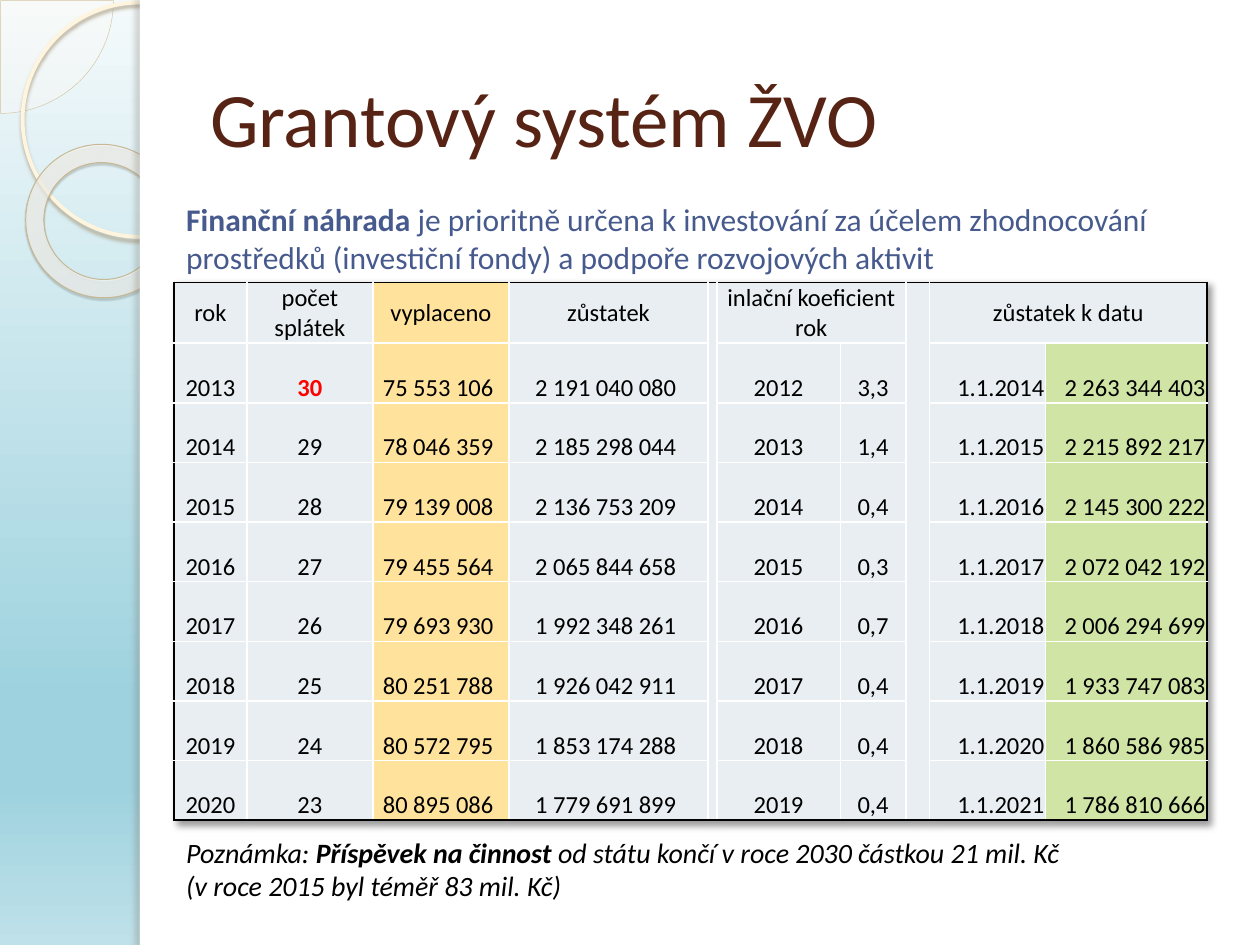
from lxml import etree
from pptx import Presentation
from pptx.dml.color import RGBColor
from pptx.enum.shapes import MSO_SHAPE
from pptx.enum.text import MSO_ANCHOR, MSO_AUTO_SIZE, PP_ALIGN
from pptx.oxml.ns import qn
from pptx.util import Inches, Pt

PIE, ELLIPSE, DONUT, RECT = (MSO_SHAPE.PIE, MSO_SHAPE.OVAL,
                             MSO_SHAPE.DONUT, MSO_SHAPE.RECTANGLE)
TOP, MIDDLE, BOTTOM = MSO_ANCHOR.TOP, MSO_ANCHOR.MIDDLE, MSO_ANCHOR.BOTTOM
CENTER, RIGHT = PP_ALIGN.CENTER, PP_ALIGN.RIGHT
FIT_SHAPE, FIXED = MSO_AUTO_SIZE.SHAPE_TO_FIT_TEXT, MSO_AUTO_SIZE.NONE

BLACK, WHITE, RED = "000000", "FFFFFF", "FF0000"
GREY, YELLOW, GREEN = "E8EEF1", "FFE39D", "D0E4A6"
BROWN, BLUE = "572314", "475A8D"

LEFT, WIDTH = 1.38, 8.2
COLUMNS = [0.58, 1, 1.08, 1.58, 0.07, 0.98, 0.52, 0.19, 0.92, 1.28]
TABLE_HEIGHT = 4.26
GAPS = (4, 7)
HEADINGS = ["rok", "počet splátek", "vyplaceno", "zůstatek", "",
            "inlační koeficient rok", "", "", "zůstatek k datu", ""]
FIRST_YEAR, FIRST_COUNT = 2013, 30
YEARLY = [  # paid out, balance, inflation rate, balance at date
    ("75 553 106 ", "2 191 040 080 ", "3,3", "2 263 344 403"),
    ("78 046 359 ", "2 185 298 044 ", "1,4", "2 215 892 217"),
    ("79 139 008 ", "2 136 753 209 ", "0,4", "2 145 300 222"),
    ("79 455 564 ", "2 065 844 658 ", "0,3", "2 072 042 192"),
    ("79 693 930 ", "1 992 348 261 ", "0,7", "2 006 294 699"),
    ("80 251 788 ", "1 926 042 911 ", "0,4", "1 933 747 083"),
    ("80 572 795 ", "1 853 174 288 ", "0,4", "1 860 586 985"),
    ("80 895 086 ", "1 779 691 899 ", "0,4", "1 786 810 666"),
]


def rgb(color):
    return RGBColor.from_string(color)


def child(parent, tag, **attributes):
    element = etree.SubElement(parent, qn(tag))
    for name, value in attributes.items():
        element.set(name, str(value))
    return element


def add_color(parent, color, alpha=100):
    node = child(parent, "a:srgbClr", val=color)
    if alpha < 100:
        child(node, "a:alpha", val=alpha * 1000)


def add_shadow(effects, color, alpha, blur, distance, angle):
    node = child(effects, "a:outerShdw", blurRad=Pt(blur), dist=Pt(distance),
                 dir=angle * 60000, algn="tl", rotWithShape=0)
    add_color(node, color, alpha)


def set_gradient(owner, stops):
    """Replace the stops of the owner's gradient and return its element."""
    gradient = next(owner.iter(qn("a:gradFill")))
    for old in list(gradient):
        gradient.remove(old)
    stop_list = child(gradient, "a:gsLst")
    for position, color, alpha in stops:
        add_color(child(stop_list, "a:gs", pos=position * 1000), color, alpha)
    return gradient


def set_borders(cell, colors):
    """Draw 1 pt cell borders; colors are left, right, top, bottom."""
    properties = cell._tc.get_or_add_tcPr()
    for index, (side, color) in enumerate(zip("LRTB", colors)):
        line = child(properties, f"a:ln{side}", w=Pt(1))
        add_color(child(line, "a:solidFill"), color)
        properties.insert(index, line)


class SlideBuilder:
    def __init__(self, page, font="Calibri"):
        self.page = page
        self.font = font

    def background(self, stops):
        self.page.background.fill.gradient()
        gradient = set_gradient(self.page.element, stops)
        child(gradient, "a:lin", ang=90 * 60000, scaled=0)

    def shape(self, kind, at, fill=None, alpha=100, line=None, shadow=None,
              adjust=(), rotation=0):
        shape = self.page.shapes.add_shape(kind, *map(Inches, at))
        shape.rotation = rotation
        for index, value in enumerate(adjust):
            shape.adjustments[index] = value
        if fill:
            shape.fill.solid()
            shape.fill.fore_color.rgb = rgb(fill)
            if alpha < 100:
                color = next(shape.element.spPr.iter(qn("a:srgbClr")))
                child(color, "a:alpha", val=alpha * 1000)
        else:
            shape.fill.background()
        if line:
            shape.line.color.rgb = rgb(line[0])
            shape.line.width = Pt(line[1])
        else:
            shape.line.fill.background()
        shape.shadow.inherit = False
        if shadow:
            add_shadow(shape.element.spPr.find(qn("a:effectLst")), *shadow)
        return shape

    def style(self, para, size, color, bold=None, italic=None):
        font = para.font
        font.name, font.size, font.color.rgb = self.font, Pt(size), rgb(color)
        font.bold, font.italic = bold, italic

    def text(self, at, paragraphs, size, color, italic=None, anchor=TOP,
             fit=FIT_SHAPE):
        """Add a text box; each paragraph is a list of (text, bold)."""
        box = self.page.shapes.add_textbox(*map(Inches, at))
        frame = box.text_frame
        frame.word_wrap = True
        frame.auto_size = fit
        frame.vertical_anchor = anchor
        for index, spans in enumerate(paragraphs):
            para = frame.add_paragraph() if index else frame.paragraphs[0]
            self.style(para, size, color, italic=italic)
            for words, bold in spans:
                span = para.add_run()
                span.text = words
                span.font.bold = bold

    def cell(self, cell, words, fill, color, align, anchor, borders):
        cell.text = words
        cell.fill.solid()
        cell.fill.fore_color.rgb = rgb(fill)
        cell.margin_left = cell.margin_right = cell.margin_top = Inches(0.01)
        cell.margin_bottom = 0
        cell.vertical_anchor = anchor
        para = cell.text_frame.paragraphs[0]
        para.alignment = align
        self.style(para, 14, color, bold=color == RED)
        set_borders(cell, borders)

    def table(self, left, top, rows):
        last_row, last_column = len(rows) - 1, len(COLUMNS) - 1
        frame = self.page.shapes.add_table(
            len(rows), len(COLUMNS), Inches(left), Inches(top),
            Inches(sum(COLUMNS)), Inches(TABLE_HEIGHT))
        table = frame.table
        table.first_row = table.horz_banding = False
        properties = table._tbl.tblPr
        effects = child(properties, "a:effectLst")
        properties.insert(0, effects)
        add_shadow(effects, BLACK, 40, 4, 3, 45)
        for column, width in zip(table.columns, COLUMNS):
            column.width = Inches(width)
        for column in GAPS:
            table.cell(0, column).merge(table.cell(last_row, column))
        for column in (5, 8):
            table.cell(0, column).merge(table.cell(0, column + 1))
        for r, row in enumerate(rows):
            for c, words in enumerate(row):
                cell = table.cell(r, c)
                end_row, end_column = r, c
                if cell.is_merge_origin:
                    end_row += cell.span_height - 1
                    end_column += cell.span_width - 1
                outer = (c == 0, end_column == last_column,
                         r == 0, end_row == last_row)
                fill = YELLOW if c == 2 else GREEN if c == 9 and r else GREY
                anchor = BOTTOM if r else TOP if c == 1 else MIDDLE
                self.cell(cell, words, fill,
                          RED if (r, c) == (1, 1) else BLACK,
                          RIGHT if r and c >= 8 else CENTER, anchor,
                          [BLACK if edge else WHITE for edge in outer])


def main():
    deck = Presentation()
    deck.slide_width, deck.slide_height = Inches(10), Inches(7.5)
    slide = SlideBuilder(deck.slides.add_slide(deck.slide_layouts[6]))

    slide.background([(0, "F4FAFB", 100), (74, "9ED2DF", 100),
                      (83, "9ED2DF", 100), (100, "BFE1E9", 100)])
    slide.shape(PIE, (-0.89, -0.89, 1.79, 1.79), "FEFAF4", 33,
                line=("D3C39F", 0.25), adjust=(0, 54))
    slide.shape(ELLIPSE, (0.18, 0.02, 1.86, 1.86), line=("FFF5DE", 2.15),
                shadow=("B0A68F", 85, 2, 2, 90))
    ring = slide.shape(DONUT, (0.2, 1.15, 1.23, 1.21), line=("C7B893", 0.58),
                       shadow=("5A5444", 35, 1, 1.2, 75), adjust=(0.12,),
                       rotation=38.6)
    ring.fill.gradient()
    gradient = set_gradient(ring.element.spPr, [
        (0, "FFFCF6", 70), (70, "FFFEFB", 55), (100, "F0D28E", 60)])
    child(child(gradient, "a:path", path="circle"), "a:fillToRect",
          l=85000, t=100000, r=1000000, b=300000)
    slide.shape(RECT, (1.11, 0, 8.89, 7.5), WHITE)
    slide.shape(RECT, (1.11, 0, 0.08, 7.5), WHITE,
                shadow=("736F63", 25, 3, 3, 180))

    slide.text((1.57, 0.3, 8.2, 1.25), [[("Grantový systém ŽVO", None)]],
               44, BROWN, anchor=MIDDLE, fit=FIXED)
    rows = [HEADINGS]
    for index, (paid, balance, rate, final) in enumerate(YEARLY):
        year = FIRST_YEAR + index
        rows.append([str(year), str(FIRST_COUNT - index), paid, balance, "",
                     str(year - 1), rate, "", f"1.1.{year + 1}", final])
    slide.table(LEFT, 2.24, rows)
    slide.text((LEFT, 6.58, WIDTH, 0.64), [
        [("Poznámka: ", None), ("Příspěvek na činnost ", True),
         ("od státu končí v roce 2030 částkou 21 mil. Kč", None)],
        [("(v roce 2015 byl téměř 83 mil. Kč)", None)],
    ], 16, BLACK, italic=True)
    slide.text((LEFT, 1.54, WIDTH, 0.71), [
        [("Finanční náhrada ", True),
         ("je prioritně určena k investování za účelem zhodnocování "
          "prostředků (investiční fondy) a podpoře rozvojových aktivit", None)],
    ], 18, BLUE)
    deck.save("out.pptx")


if __name__ == "__main__":
    main()
